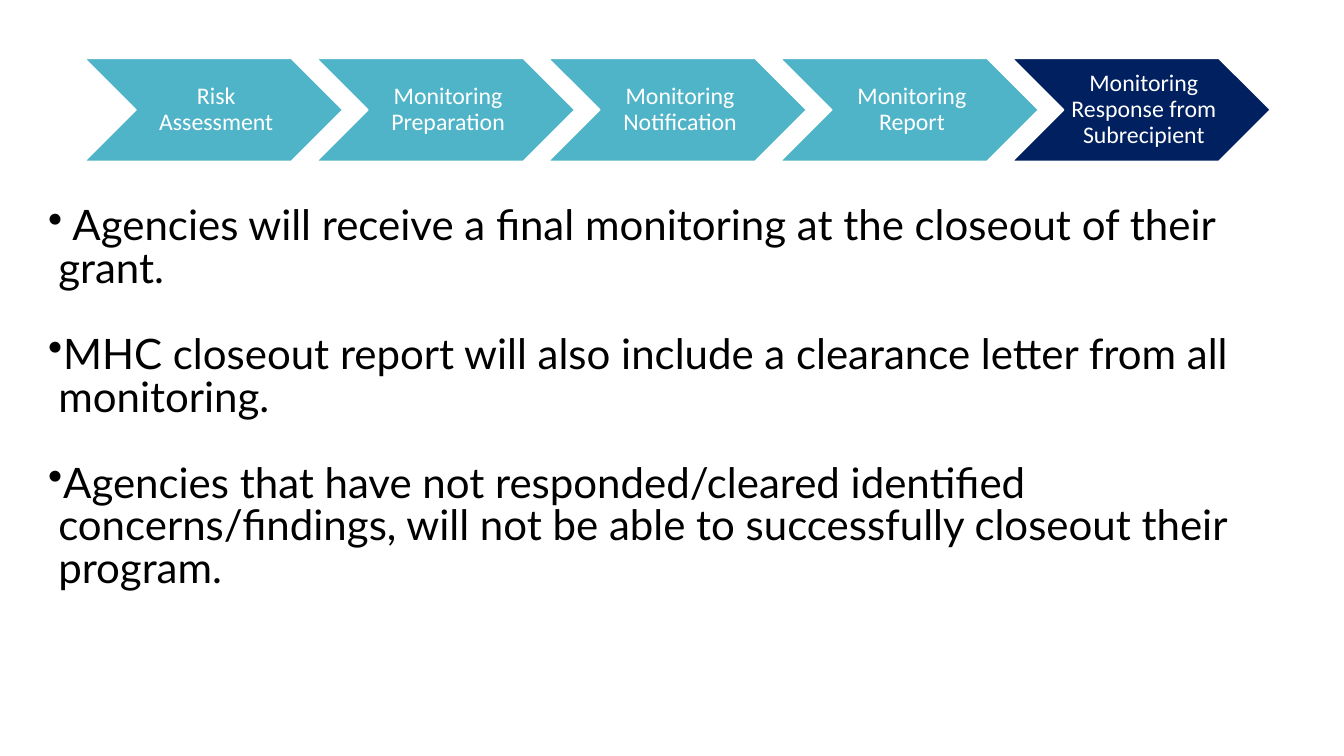
import pptx
import pptx.dml.color
import pptx.enum.shapes
import pptx.enum.text
import pptx.oxml.ns
import pptx.util
from lxml import etree

PX = 9144  # 100 px to the inch
COLORS = {"teal": "50B4C8", "navy": "002060", "white": "FFFFFF", "black": "000000"}
STEPS = [
    ("Risk Assessment", "teal"),
    ("Monitoring Preparation", "teal"),
    ("Monitoring Notification", "teal"),
    ("Monitoring Report", "teal"),
    ("Monitoring Response from Subrecipient", "navy"),
]
BULLETS = [
    " Agencies will receive a final monitoring at the closeout of their grant.",
    "MHC closeout report will also include a clearance letter from all monitoring.",
    "Agencies that have not responded/cleared identified concerns/findings, "
    "will not be able to successfully closeout their program.",
]


def rgb(name):
    return pptx.dml.color.RGBColor.from_string(COLORS[name])


def add_text(p, text, font, size, color):
    r = p.add_run()
    r.text = text
    for name, value in {"name": font, "size": pptx.util.Pt(size)}.items():
        setattr(r.font, name, value)
    r.font.color.rgb = rgb(color)


prs = pptx.Presentation()
prs.slide_width, prs.slide_height = 1333 * PX, 750 * PX
s = prs.slides.add_slide(prs.slide_layouts[6])

# Process chevrons
for i, (label, color) in enumerate(STEPS):
    sp = s.shapes.add_shape(pptx.enum.shapes.MSO_SHAPE.CHEVRON,
                            (84 + 230 * i) * PX, 58 * PX, 256 * PX, 102 * PX)
    sp.shadow.inherit = False
    sp.fill.solid()
    sp.fill.fore_color.rgb = rgb(color)
    sp.line.color.rgb = rgb("white")
    sp.line.width = pptx.util.Pt(1)
    tf = sp.text_frame
    frame = {"margin_left": 7 * PX, "margin_top": 2 * PX, "margin_right": 2 * PX,
             "margin_bottom": 2 * PX, "word_wrap": True,
             "vertical_anchor": pptx.enum.text.MSO_ANCHOR.MIDDLE}
    for name, value in frame.items():
        setattr(tf, name, value)
    p = tf.paragraphs[0]
    p.alignment = pptx.enum.text.PP_ALIGN.CENTER
    p.line_spacing = 0.9
    add_text(p, label, "Calibri", 17, "white")

# Closeout bullets
tf = s.shapes.add_textbox(38 * PX, 200 * PX, 1240 * PX, 472 * PX).text_frame
tf.word_wrap = True
for i, text in enumerate(BULLETS):
    p = tf.add_paragraph() if i else tf.paragraphs[0]
    pPr = p._p.get_or_add_pPr()
    pPr.set("marL", str(10 * PX))
    pPr.set("indent", str(-10 * PX))
    etree.SubElement(pPr, pptx.oxml.ns.qn("a:buChar"), char="•")
    p.line_spacing = 0.85
    if i:
        p.space_before = pptx.util.Pt(30.6)
    add_text(p, text, "Lato", 30, "black")

prs.save("out.pptx")
